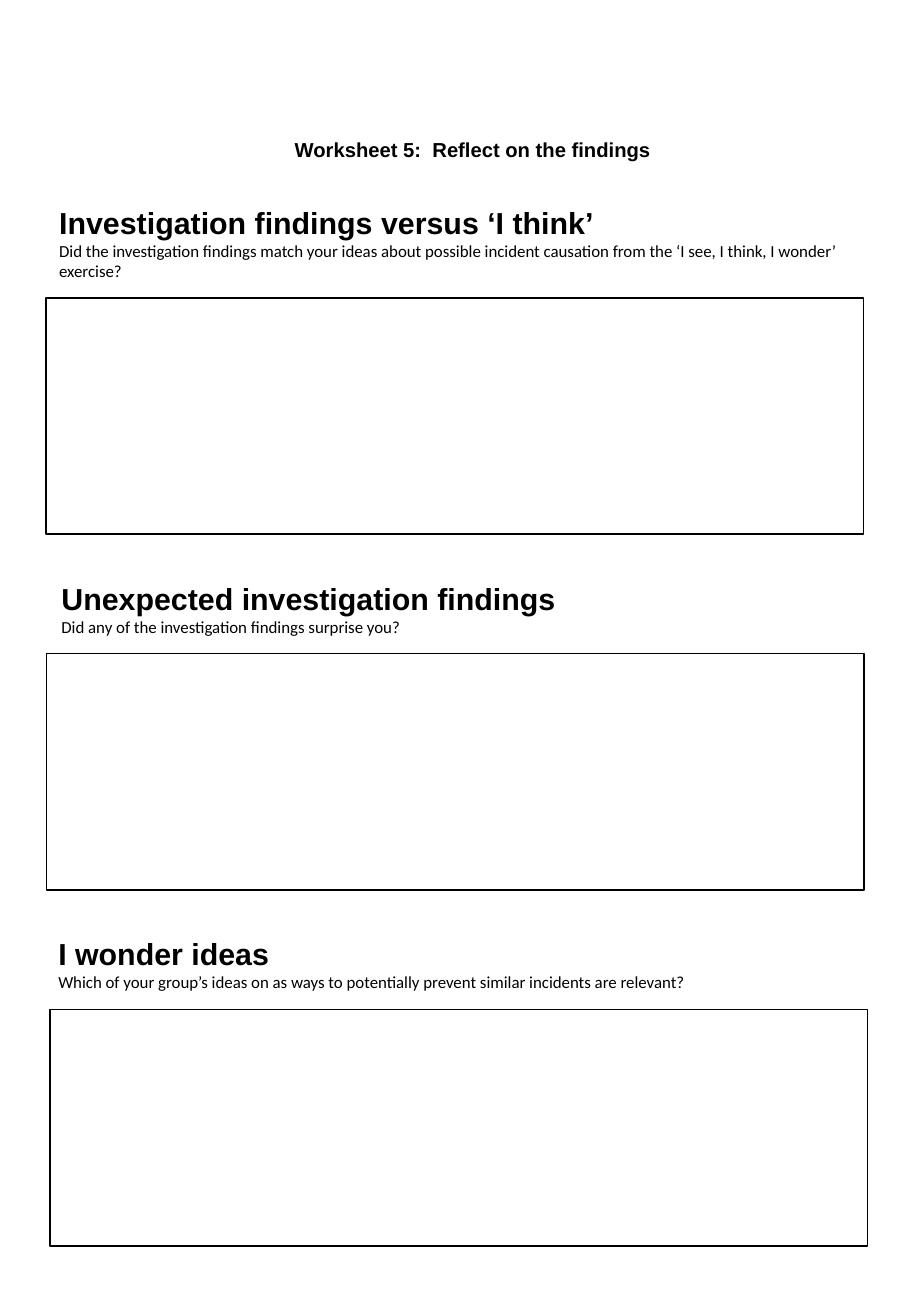
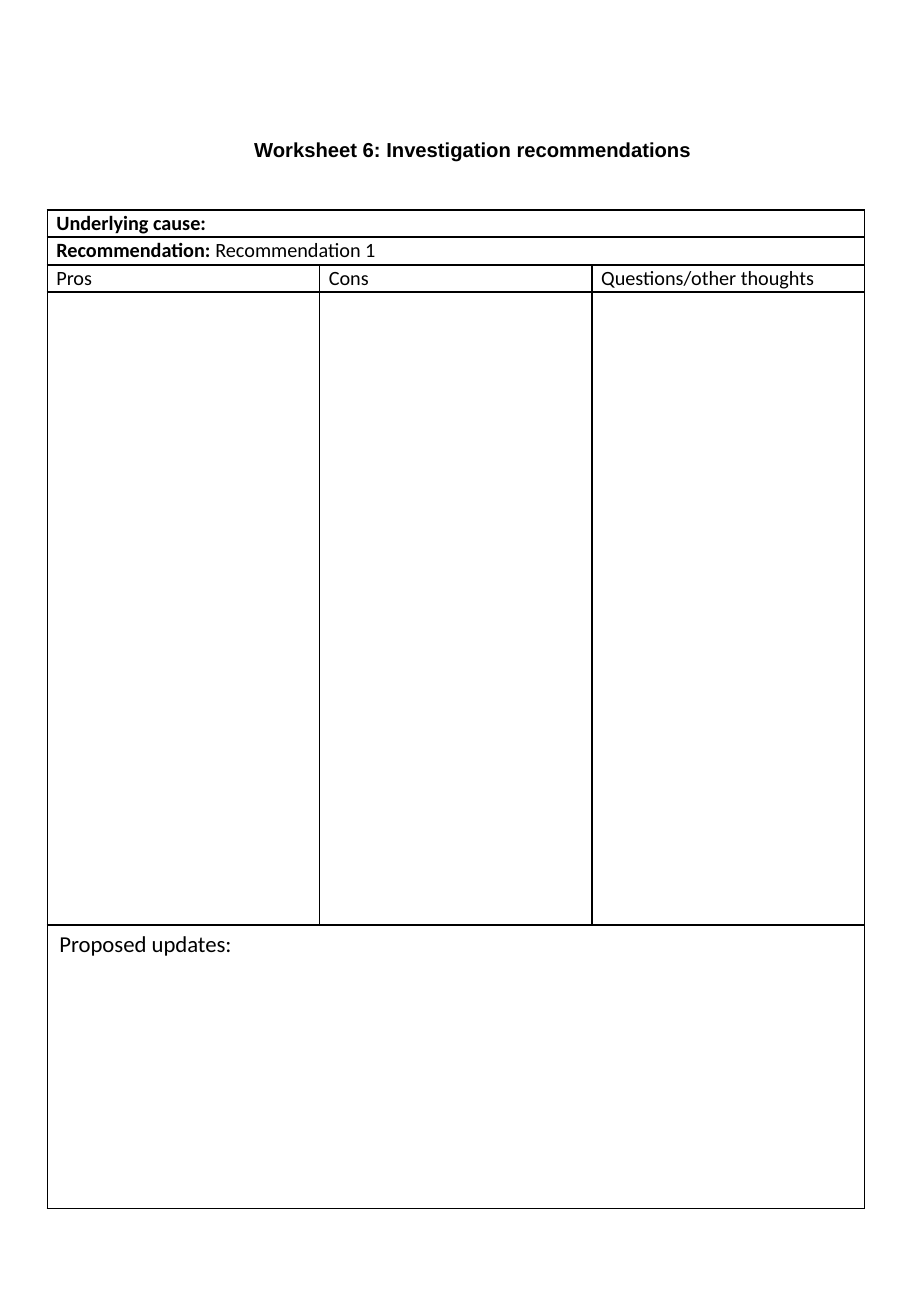
from lxml import etree
from pptx import Presentation
from pptx.dml.color import RGBColor
from pptx.enum.shapes import MSO_SHAPE
from pptx.enum.text import MSO_AUTO_SIZE, PP_ALIGN
from pptx.oxml import parse_xml
from pptx.util import Pt

RECT = MSO_SHAPE.RECTANGLE
GROW = MSO_AUTO_SIZE.SHAPE_TO_FIT_TEXT
CENTER = PP_ALIGN.CENTER
NS = "http://schemas.openxmlformats.org/drawingml/2006/main"
INK = "000000"
PAPER = "FFFFFF"
HEAD = "Arial"
BODY = "Calibri"
WIDTH = 484.5


def color(code):
    return RGBColor.from_string(code)


def write(slide, left, top, height, lines, align=None):
    box = slide.shapes.add_textbox(Pt(left), Pt(top), Pt(WIDTH), Pt(height))
    frame = box.text_frame
    frame.word_wrap = True
    frame.auto_size = GROW
    for i, (text, face, size, bold) in enumerate(lines):
        para = frame.paragraphs[0] if i == 0 else frame.add_paragraph()
        para.text = text
        para.alignment = align
        para.font.name = face
        para.font.size = Pt(size)
        para.font.bold = bold
        para.font.color.rgb = color(INK)


deck = Presentation()
deck.slide_width = Pt(540)
deck.slide_height = Pt(780)

titles = [
    "Worksheet 5:  Reflect on the findings",
    "Worksheet 6: Investigation recommendations",
]
pages = []
for title in titles:
    page = deck.slides.add_slide(deck.slide_layouts[6])
    write(page, 38, 78, 21.8, [(title, HEAD, 12, True)], CENTER)
    pages.append(page)
first, second = pages

parts = [
    (28, 117.4, 53, 27.4, 176.5, "Investigation findings versus ‘I think’",
     "Did the investigation findings match your ideas about possible incident "
     "causation from the ‘I see, I think, I wonder’ exercise?"),
    (29.3, 340.6, 41, 27.6, 387.4, "Unexpected investigation findings",
     "Did any of the investigation findings surprise you?"),
    (27.5, 551, 41, 29.8, 598.4, "I wonder ideas",
     "Which of your group’s ideas on as ways to potentially prevent similar "
     "incidents are relevant?"),
]
for left, top, height, edge, start, name, ask in parts:
    write(first, left, top, height,
          [(name, HEAD, 18, True), (ask, BODY, 10, False)])
    area = first.shapes.add_shape(RECT, Pt(edge), Pt(start), Pt(WIDTH), Pt(140))
    area.shadow.inherit = False
    area.fill.solid()
    area.fill.fore_color.rgb = color(PAPER)
    area.line.color.rgb = color(INK)
    area.line.width = Pt(1)

rows = [
    (16, 12, [[("Underlying cause:", True)]]),
    (16.5, 12, [[("Recommendation:", True), (" Recommendation 1", False)]]),
    (16, 12, [[("Pros", False)], [("Cons", False)],
              [("Questions/other thoughts", False)]]),
    (375.3, 12, [[], [], []]),
    (168, 13.5, [[("Proposed updates:", False)]]),
]
total = sum(row[0] for row in rows)
frame = second.shapes.add_table(len(rows), 3, Pt(28), Pt(124.5), Pt(WIDTH), Pt(total))
table = frame.table
table.first_row = False
table.horz_banding = False
for col in table.columns:
    col.width = Pt(WIDTH / 3)

for r, (height, size, texts) in enumerate(rows):
    table.rows[r].height = Pt(height)
    if len(texts) == 1:
        table.cell(r, 0).merge(table.cell(r, 2))
    for c in range(3):
        cell = table.cell(r, c)
        props = cell._tc.get_or_add_tcPr()
        for side in ("lnL", "lnR", "lnT", "lnB"):
            edge = parse_xml(f'<a:{side} xmlns:a="{NS}" w="{Pt(1)}"/>')
            paint = etree.SubElement(edge, f"{{{NS}}}solidFill")
            etree.SubElement(paint, f"{{{NS}}}srgbClr", val=INK)
            props.append(edge)
        cell.fill.solid()
        cell.fill.fore_color.rgb = color(PAPER)
        if r < 4:
            cell.margin_left = cell.margin_right = Pt(5.4)
            cell.margin_top = cell.margin_bottom = 0
        para = cell.text_frame.paragraphs[0]
        if r < 3:
            para.line_spacing = 1.07
        para.font.name = BODY
        para.font.size = Pt(size)
        para.font.color.rgb = color(INK)
        for text, bold in texts[c] if c < len(texts) else []:
            run = para.add_run()
            run.text = text
            run.font.bold = bold

deck.save("out.pptx")
